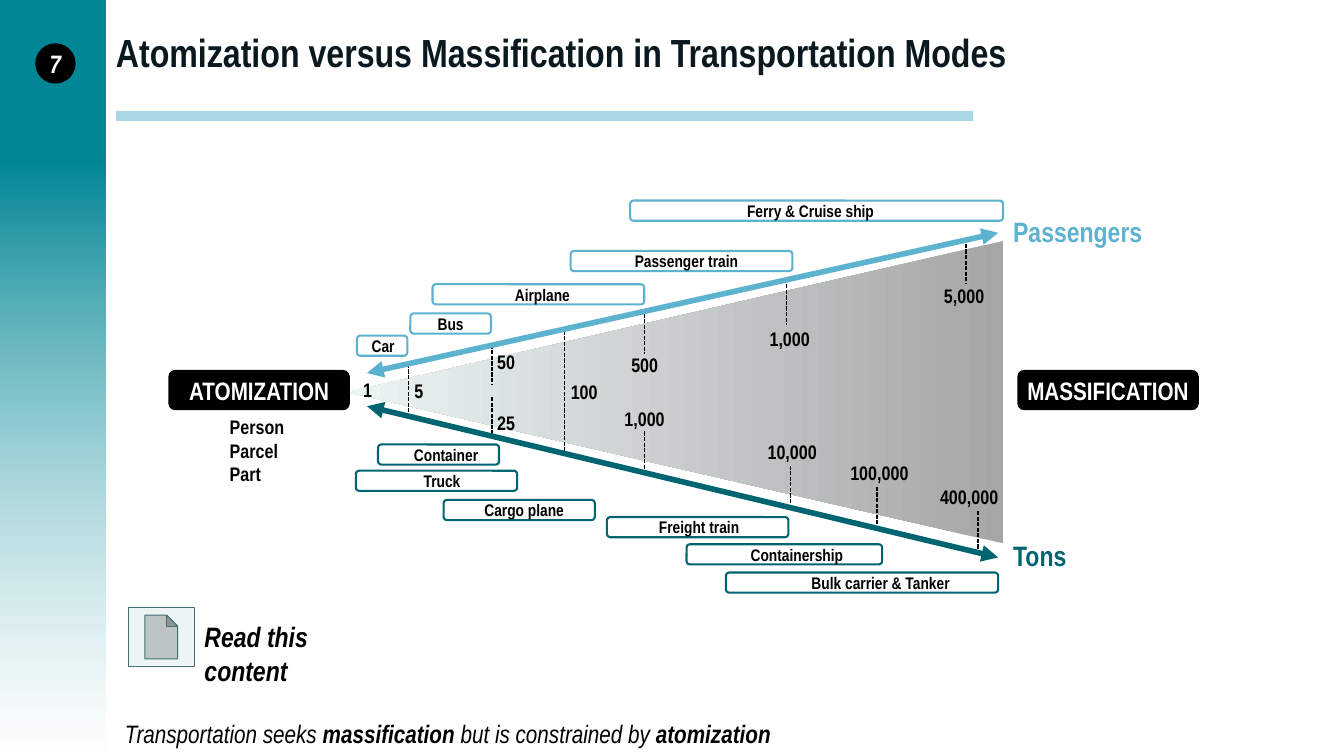
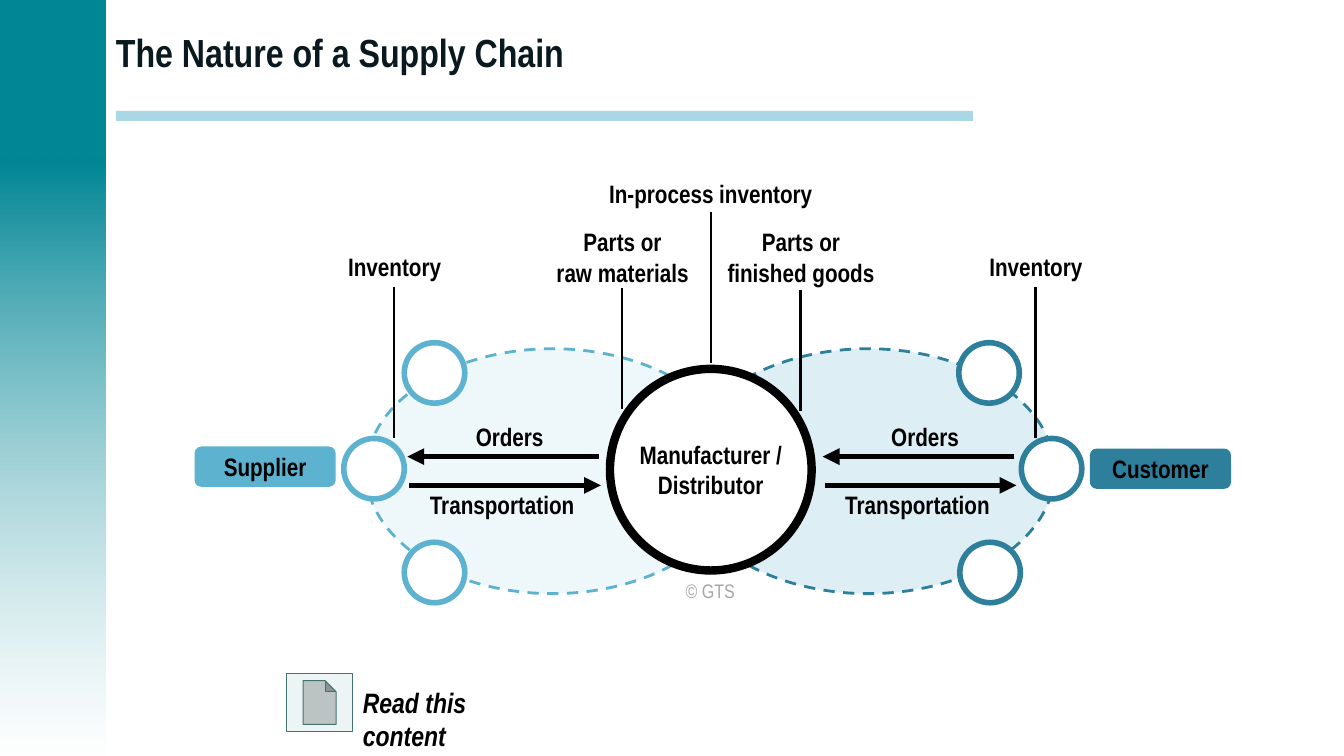
from dataclasses import dataclass

from lxml.etree import SubElement
from pptx import Presentation
from pptx.dml.color import RGBColor
from pptx.enum.dml import MSO_LINE
from pptx.enum.shapes import MSO_CONNECTOR, MSO_SHAPE
from pptx.enum.text import MSO_ANCHOR, MSO_AUTO_SIZE, PP_ALIGN
from pptx.oxml.ns import qn
from pptx.util import Inches, Pt


@dataclass(frozen=True)
class Theme:
    font: str = "Arial Narrow"
    title: str = "09191F"
    band: str = "008695"
    rule: str = "AAD7E6"
    black: str = "000000"
    white: str = "FFFFFF"
    gray: str = "A6A6A6"
    mist: str = "ECF4F4"
    icon_line: str = "427272"
    sky: str = "5DB3CF"
    sky_pale: str = "EEF7FA"
    teal: str = "006570"
    blue: str = "2D7F9B"
    blue_pale: str = "DDEFF5"
    title_size: int = 28
    large: int = 20
    body: int = 18
    small: int = 14
    tiny: int = 12


theme = Theme()
cell = Inches(0.1)


def add_box(page, kind, at, fill=None, line=None, weight=1.5, dash=None, text="",
            size=theme.body, color=theme.black, align=PP_ALIGN.CENTER, **font_format):
    place = [int(value * cell) for value in at]
    if kind is None:
        box = page.shapes.add_textbox(*place)
    else:
        box = page.shapes.add_shape(kind, *place)
        box.shadow.inherit = False
        if fill:
            box.fill.solid()
            box.fill.fore_color.rgb = RGBColor.from_string(fill)
        if line:
            box.line.color.rgb = RGBColor.from_string(line)
            box.line.width = Pt(weight)
            box.line.dash_style = dash
        else:
            box.line.fill.background()
    frame = box.text_frame
    frame_format = {"word_wrap": False}
    if kind is None:
        frame_format["auto_size"] = MSO_AUTO_SIZE.SHAPE_TO_FIT_TEXT
    else:
        frame_format |= {"margin_left": 0, "margin_right": 0, "margin_top": 0,
                         "margin_bottom": 0, "vertical_anchor": MSO_ANCHOR.MIDDLE}
    for name, value in frame_format.items():
        setattr(frame, name, value)
    run_format = {"name": theme.font, "size": Pt(size), "bold": True} | font_format
    for index, words in enumerate(text.split("\n") if text else []):
        para = frame.add_paragraph() if index else frame.paragraphs[0]
        para.alignment = align
        span = para.add_run()
        span.text = words
        span.font.color.rgb = RGBColor.from_string(color)
        for name, value in run_format.items():
            setattr(span.font, name, value)
    return box


def add_line(page, start, end, color=theme.black, weight=1.5, dash=None, arrows=()):
    points = [int(value * cell) for value in (*start, *end)]
    line = page.shapes.add_connector(MSO_CONNECTOR.STRAIGHT, *points)
    line.line.color.rgb = RGBColor.from_string(color)
    line.line.width = Pt(weight)
    line.line.dash_style = dash
    for arrow in arrows:
        SubElement(line.get_or_add_ln(), qn(arrow), type="triangle")
    SubElement(line.element.spPr, qn("a:effectLst"))


deck = Presentation()
deck.slide_width = Inches(13.33)
deck.slide_height = Inches(7.5)
layout = deck.slide_layouts[5]

pages = []
for heading, icon_left, icon_top in (
    ("Atomization versus Massification in Transportation Modes", 12.7, 60.3),
    ("The Nature of a Supply Chain", 28.4, 66.8),
):
    page = deck.slides.add_slide(layout)
    pages.append(page)
    title = page.shapes.title
    title_place = {"left": 10.5, "top": 0.1, "width": 119.8, "height": 10}
    for name, value in title_place.items():
        setattr(title, name, int(value * cell))
    title.text_frame.text = heading
    title.text_frame.vertical_anchor = MSO_ANCHOR.MIDDLE
    para = title.text_frame.paragraphs[0]
    para.alignment = PP_ALIGN.LEFT
    title_format = {"name": theme.font, "size": Pt(theme.title_size), "bold": True}
    for name, value in title_format.items():
        setattr(para.font, name, value)
    para.font.color.rgb = RGBColor.from_string(theme.title)
    add_box(page, MSO_SHAPE.ACTION_BUTTON_DOCUMENT, (icon_left, icon_top, 6.6, 5.8),
            theme.mist, theme.icon_line, 0.75)
    prompt = add_box(page, None, (icon_left + 6.6, icon_top + 0.7, 18.6, 4.4),
                     text="Read this content", size=theme.large,
                     align=PP_ALIGN.LEFT, italic=True)
    prompt.text_frame.word_wrap = True

modes_page, chain_page = pages

side_top = add_box(modes_page, MSO_SHAPE.RECTANGLE, (-0.2, -0.1, 10.7, 15.8), theme.band)
side_fade = add_box(modes_page, MSO_SHAPE.RECTANGLE, (-0.2, 15.7, 10.7, 59.3))
title_rule = add_box(modes_page, MSO_SHAPE.RECTANGLE, (11.5, 11, 85, 1), theme.rule)
wedge = add_box(modes_page, MSO_SHAPE.ISOSCELES_TRIANGLE, (52, 6.4, 30, 65))
wedge.rotation = 270
for box, angle, colors in (
    (side_fade, 270, (theme.band, theme.white)),
    (wedge, 90, (theme.gray, theme.mist)),
):
    box.fill.gradient()
    box.fill.gradient_angle = angle
    for stop, color in zip(box.fill.gradient_stops, colors):
        stop.color.rgb = RGBColor.from_string(color)
fade_end = list(side_fade.element.iter(qn("a:srgbClr")))[-1]
SubElement(fade_end, qn("a:alpha"), val="51000")
for index, band in enumerate((side_top, side_fade, title_rule)):
    band.element.nvSpPr.cNvPr.set("id", str(90 + index))
    layout.shapes.element.insert(2 + index, band.element)

add_box(modes_page, MSO_SHAPE.OVAL, (3.5, 4.3, 4, 4), theme.black,
        text="7", color=theme.white, italic=True)

passenger_modes = (
    ("Car", 35.4, 33.3, 5, 0.1),
    ("Bus", 40.7, 31.1, 8, 0),
    ("Airplane", 42.9, 28.2, 21, 0.4),
    ("Passenger train", 56.6, 24.9, 22, 0.5),
    ("Ferry & Cruise ship", 62.5, 19.9, 37, -0.6),
)
freight_modes = (
    ("Container", 37.5, 44.1, 12, 0.75),
    ("Truck", 35.3, 46.7, 16, 0.55),
    ("Cargo plane", 44, 49.6, 15, 0.5),
    ("Freight train", 60.2, 51.3, 18, 0.15),
    ("Containership", 68.1, 54, 19.4, 1.25),
    ("Bulk carrier & Tanker", 72, 56.8, 27, 1.85),
)
for color, modes in ((theme.sky, passenger_modes), (theme.teal, freight_modes)):
    for mode, left, top, width, shift in modes:
        box = add_box(modes_page, MSO_SHAPE.ROUNDED_RECTANGLE, (left, top, width, 2),
                      theme.white, color, text=mode, size=theme.tiny)
        box.text_frame.margin_left = int(max(0, 2 * shift) * cell)
        box.text_frame.margin_right = int(max(0, -2 * shift) * cell)

for number, left, top in (
    ("1", 35, 37), ("5", 40.1, 37.1), ("50", 48.3, 34.2), ("25", 48.3, 40.3),
    ("100", 55.6, 37.2), ("500", 61.6, 34.5), ("1,000", 60.9, 39.9),
    ("1,000", 75.3, 31.9), ("10,000", 75.1, 43.2), ("100,000", 83.3, 45.2),
    ("5,000", 92.6, 27.7), ("400,000", 92.2, 47.6),
):
    commas = number.count(",")
    width = 2 + 0.9 * (len(number) - commas) + 0.45 * commas
    add_box(modes_page, None, (left, top, width, 3.4), text=number, size=theme.small)

for left, top, length in (
    (40.5, 36.1, 5), (48.8, 39.4, 4), (48.8, 34.2, 4), (56, 32.8, 12),
    (63.9, 31.1, 4), (63.9, 42.8, 4), (78, 28.2, 4), (78.4, 46.2, 4),
    (95.8, 24.2, 4), (97, 50.7, 4), (87, 48.3, 4),
):
    add_line(modes_page, (left, top), (left, top + length), weight=1,
             dash=MSO_LINE.SQUARE_DOT)

for name, color, label_top, label_width, start, end in (
    ("Passengers", theme.sky, 20.8, 14.9, 37, 23.1),
    ("Tons", theme.teal, 52.9, 7.3, 40.3, 55.3),
):
    add_box(modes_page, None, (99.5, label_top, label_width, 4.4), text=name,
            size=theme.large, color=color, align=PP_ALIGN.LEFT)
    add_line(modes_page, (36.4, start), (99, end), color, 4,
             arrows=("a:headEnd", "a:tailEnd"))

for name, left in (("ATOMIZATION", 16.7), ("MASSIFICATION", 100.9)):
    add_box(modes_page, MSO_SHAPE.ROUNDED_RECTANGLE, (left, 36.7, 18, 4), theme.black,
            text=name, color=theme.white)
add_box(modes_page, None, (21.8, 40.7, 7.5, 8.1), text="Person\nParcel\nPart",
        size=theme.small, align=PP_ALIGN.LEFT)

caption = add_box(modes_page, None, (11.4, 70.8, 69.1, 4))
para = caption.text_frame.paragraphs[0]
for words, bold in (
    ("Transportation seeks ", False), ("massification", True),
    (" but is constrained by ", False), ("atomization", True),
):
    span = para.add_run()
    span.text = words
    span.font.color.rgb = RGBColor.from_string(theme.black)
    caption_format = {"name": theme.font, "size": Pt(theme.body), "italic": True, "bold": bold}
    for name, value in caption_format.items():
        setattr(span.font, name, value)

sides = (
    ("Supplier", theme.sky, theme.sky_pale, 36.3, (40.1, 34.1, 40.1), 40.4, 39.1, 19.3, 44.3),
    ("Customer", theme.blue, theme.blue_pale, 67.6, (95.1, 101.3, 95.2), 81.6, 102.7, 108.1, 44.5),
)
for name, color, pale, field, nodes, flow, stock, tag_left, tag_top in sides:
    add_box(chain_page, MSO_SHAPE.OVAL, (field, 34.6, 37, 24.3), pale, color, 2, MSO_LINE.DASH)
    for left, top in zip(nodes, (34, 43.5, 53.8)):
        add_box(chain_page, MSO_SHAPE.OVAL, (left, top, 6, 6), theme.white, color, 4)
    add_line(chain_page, (flow + 19, 45.3), (flow, 45.3), weight=4, arrows=("a:tailEnd",))
    add_line(chain_page, (flow + 0.2, 48.15), (flow + 19.2, 48.15), weight=4,
             arrows=("a:tailEnd",))
    add_line(chain_page, (stock, 28.5), (stock, 43.5))
    for label, left, top, width in (
        ("Orders", flow + 5.75, 41.35, 8.8),
        ("Transportation", flow + 1.15, 48.1, 16.5),
        ("Inventory", stock - 5.6, 24.4, 11.3),
    ):
        add_box(chain_page, None, (left, top, width, 4), text=label)
    add_box(chain_page, MSO_SHAPE.ROUNDED_RECTANGLE, (tag_left, tag_top, 14, 4), color, text=name)

add_box(chain_page, MSO_SHAPE.OVAL, (60.5, 36.6, 20, 20), theme.white, theme.black, 6,
        text="Manufacturer /\nDistributor")
for label, left, top, width, height, line_left, line_top, length in (
    ("Parts or\nraw materials", 54.1, 22, 15.3, 7.1, 61.7, 28.6, 12),
    ("In-process inventory", 59.3, 17.2, 22.4, 4, 70.5, 21, 15),
    ("Parts or\nfinished goods", 71.1, 22, 16.7, 7.1, 79.4, 28.8, 12),
):
    add_line(chain_page, (line_left, line_top), (line_left, line_top + length))
    add_box(chain_page, None, (left, top, width, height), text=label)
add_box(chain_page, None, (67, 56.9, 6.9, 3.4), text="© GTS", size=theme.small,
        color=theme.gray, bold=False)

deck.save("out.pptx")
